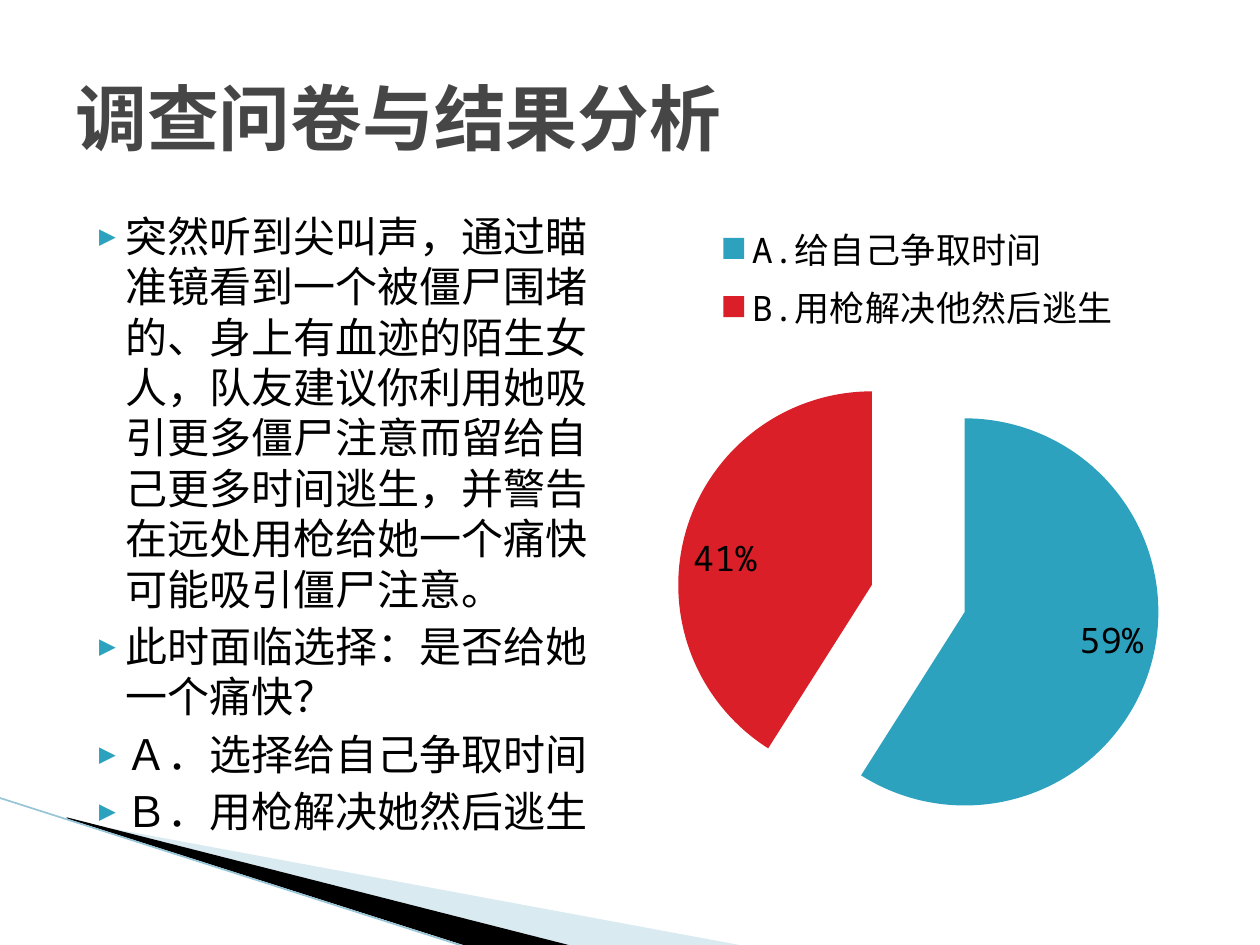
from dataclasses import dataclass

from lxml import etree
from pptx import Presentation
from pptx import util as u
from pptx.chart.data import CategoryChartData
from pptx.dml.color import RGBColor
from pptx.enum import chart as charts, shapes, text
from pptx.oxml.ns import qn


@dataclass(frozen=True)
class Theme:
    font: str = "Noto Sans Mono"
    title_color: str = "464646"
    ink: str = "000000"
    accent: str = "2DA2BF"
    red: str = "DA1F28"
    pale: str = "A0CBDC"
    edge: str = "97C5D8"
    title_size: float = 41
    body_size: float = 24
    label_size: float = 20


def rgb(value):
    return RGBColor.from_string(value)


def add_node(parent, tag, **attributes):
    return etree.SubElement(parent, qn(tag), attributes)


def write(para, words, *, theme, size, color, bold=False):
    """Add one formatted span of text to a paragraph."""
    span = para.add_run()
    span.text = words
    font = span.font
    font.name, font.size, font.bold = theme.font, u.Pt(size), bold
    font.color.rgb = rgb(color)
    add_node(font._element, "a:ea", typeface=theme.font)


class SlideBuilder:
    def __init__(self, page, theme):
        self.page, self.theme = page, theme

    def wedge(self, points, color, opacity=100):
        outline = self.page.shapes.build_freeform(*points[0], scale=u.Pt(1))
        outline.add_line_segments(points[1:], close=True)
        shape = outline.convert_to_shape()
        shape.shadow.inherit = False
        shape.fill.solid()
        shape.fill.fore_color.rgb = rgb(color)
        shape.line.fill.background()
        if opacity < 100:
            fill = shape._element.spPr.find(qn("a:solidFill"))
            add_node(fill[0], "a:alpha", val=str(opacity * 1000))

    def line(self, start, end, color, width):
        ends = [u.Pt(value) for value in (*start, *end)]
        line = self.page.shapes.add_connector(shapes.MSO_CONNECTOR.STRAIGHT, *ends)
        line.line.color.rgb = rgb(color)
        line.line.width = u.Pt(width)
        add_node(line._element.spPr, "a:effectLst")

    def text_frame(self, left, top, width, height, anchor):
        box = self.page.shapes.add_textbox(*map(u.Pt, (left, top, width, height)))
        frame = box.text_frame
        frame.word_wrap = True
        frame.vertical_anchor = anchor
        return frame

    def title(self, words, *place):
        frame = self.text_frame(*place, text.MSO_ANCHOR.MIDDLE)
        write(frame.paragraphs[0], words, theme=self.theme, bold=True,
              size=self.theme.title_size, color=self.theme.title_color)

    def bullets(self, items, *place):
        frame = self.text_frame(*place, text.MSO_ANCHOR.TOP)
        for number, words in enumerate(items):
            para = frame.add_paragraph() if number else frame.paragraphs[0]
            para.space_before = u.Pt(4 if number else 0)
            para.line_spacing = u.Pt(28.8)
            props = para._p.get_or_add_pPr()
            props.set("marL", str(u.Pt(28.8)))
            props.set("indent", str(u.Pt(-20.2)))
            add_node(add_node(props, "a:buClr"), "a:srgbClr", val=self.theme.accent)
            add_node(props, "a:buSzPct", val="68000")
            add_node(props, "a:buFont", typeface=self.theme.font)
            add_node(props, "a:buChar", char="▶")
            write(para, words, theme=self.theme,
                  size=self.theme.body_size, color=self.theme.ink)

    def style_font(self, font, size):
        font.name, font.size = self.theme.font, u.Pt(size)
        font.color.rgb = rgb(self.theme.ink)

    def pie(self, slices, *place):
        data = CategoryChartData()
        data.categories = [name for name, _, _ in slices]
        series_name = "Series 1"
        data.add_series(series_name, [value for _, value, _ in slices])
        chart = self.page.shapes.add_chart(
            charts.XL_CHART_TYPE.PIE_EXPLODED, *map(u.Pt, place), data).chart
        self.style_font(chart.font, 18)
        chart.has_title = False
        chart.has_legend = True
        chart.legend.position = charts.XL_LEGEND_POSITION.TOP
        chart.legend.include_in_layout = False
        self.style_font(chart.legend.font, self.theme.label_size)

        plot = chart.plots[0]
        plot.vary_by_categories = True
        series = plot.series[0]
        for number, (_, _, color) in enumerate(slices):
            fill = series.points[number].format.fill
            fill.solid()
            fill.fore_color.rgb = rgb(color)
        labels = series.data_labels
        labels.show_percentage, labels.show_value = True, False
        labels.number_format, labels.number_format_is_linked = "0%", False
        labels.position = charts.XL_LABEL_POSITION.INSIDE_END
        self.style_font(labels.font, self.theme.label_size)


def main():
    deck = Presentation()
    deck.slide_width, deck.slide_height = u.Pt(720), u.Pt(540)
    theme = Theme()
    slide = SlideBuilder(deck.slides.add_slide(deck.slide_layouts[6]), theme)

    # Corner decoration
    slide.wedge([(39.6, 468.7), (428.4, 540.7), (328.3, 540.7), (39.6, 468)],
                theme.pale, opacity=40)
    slide.wedge([(38.2, 467.3), (329, 540.7), (267.8, 541.4), (38.9, 468)], theme.ink)
    slide.line((-0.7, 455.8), (267.1, 541.4), theme.edge, 0.95)

    # Title and scenario
    slide.title("调查问卷与结果分析", 36, 21.6, 648, 90)
    slide.bullets([
        "突然听到尖叫声，通过瞄准镜看到一个被僵尸围堵的、身上有血迹的陌生女人，"
        "队友建议你利用她吸引更多僵尸注意而留给自己更多时间逃生，"
        "并警告在远处用枪给她一个痛快可能吸引僵尸注意。",
        "此时面临选择：是否给她一个痛快？",
        "Ａ．选择给自己争取时间",
        "Ｂ．用枪解决她然后逃生",
    ], 36, 116.6, 318.2, 356.4)

    # Survey result
    slide.pie([("A.给自己争取时间", 59, theme.accent),
               ("B.用枪解决他然后逃生", 41, theme.red)],
              357.8, 118, 334, 372.2)

    deck.save("out.pptx")


if __name__ == "__main__":
    main()
